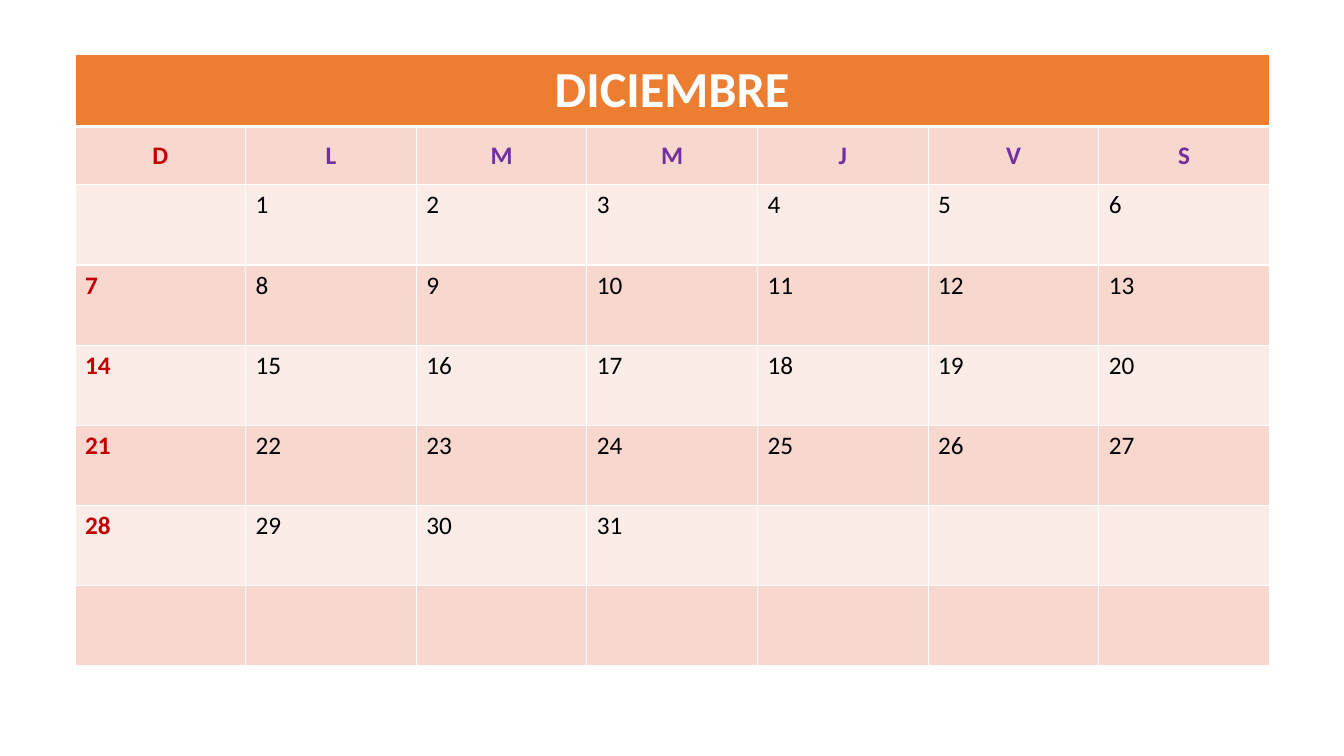
from dataclasses import dataclass

from lxml import etree
from pptx import Presentation
from pptx.dml import color
from pptx.enum import text
from pptx.oxml import ns
from pptx.util import Cm, Pt


@dataclass(frozen=True)
class Theme:
    font: str = "Calibri"
    title_size: int = 36
    body_size: int = 18
    white: str = "FFFFFF"
    black: str = "000000"
    orange: str = "ED7D31"
    band_dark: str = "F8D7CE"
    band_light: str = "FCECE8"
    sunday: str = "C00000"
    weekday: str = "7030A0"
    border: float = 1
    title_border: float = 3


class CalendarSlide:
    def __init__(self, presentation, theme):
        self.theme = theme
        self.slide = presentation.slides.add_slide(presentation.slide_layouts[6])

    def borders(self, cell, top, bottom):
        theme = self.theme
        properties = cell._tc.get_or_add_tcPr()
        widths = {"lnL": theme.border, "lnR": theme.border, "lnT": top, "lnB": bottom}
        for index, (side, width) in enumerate(widths.items()):
            line = etree.Element(ns.qn(f"a:{side}"), w=str(Pt(width)))
            fill = etree.SubElement(line, ns.qn("a:solidFill"))
            etree.SubElement(fill, ns.qn("a:srgbClr"), val=theme.white)
            properties.insert(index, line)

    def cell(self, cell, words, fill, ink, size=None, bold=False, centred=False):
        cell.fill.solid()
        cell.fill.fore_color.rgb = color.RGBColor.from_string(fill)
        cell.text = words
        paragraph = cell.text_frame.paragraphs[0]
        if centred:
            cell.vertical_anchor = text.MSO_ANCHOR.MIDDLE
            paragraph.alignment = text.PP_ALIGN.CENTER
        values = {"name": self.theme.font, "size": Pt(size or self.theme.body_size), "bold": bold}
        for name, value in values.items():
            setattr(paragraph.font, name, value)
        paragraph.font.color.rgb = color.RGBColor.from_string(ink)

    def calendar(self, month, weekdays, first_column, days, left, top, column_width, heights):
        theme = self.theme
        columns = len(weekdays)
        table = self.slide.shapes.add_table(
            len(heights), columns, Cm(left), Cm(top), Cm(column_width * columns), Cm(sum(heights))
        ).table
        for column in table.columns:
            column.width = Cm(column_width)
        for row, height in zip(table.rows, heights):
            row.height = Cm(height)

        table.cell(0, 0).merge(table.cell(0, columns - 1))
        self.cell(table.cell(0, 0), month, theme.orange, theme.white,
                  size=theme.title_size, bold=True, centred=True)
        for index, weekday in enumerate(weekdays):
            ink = theme.weekday if index else theme.sunday
            self.cell(table.cell(1, index), weekday, theme.band_dark, ink, bold=True, centred=True)

        for row in range(2, len(heights)):
            fill = theme.band_dark if row % 2 else theme.band_light
            for index in range(columns):
                day = (row - 2) * columns + index - first_column + 1
                words = str(day) if 1 <= day <= days else ""
                ink = theme.black if index else theme.sunday
                self.cell(table.cell(row, index), words, fill, ink, bold=index == 0)

        for row in range(len(heights)):
            above = theme.title_border if row == 1 else theme.border
            below = theme.title_border if row == 0 else theme.border
            for index in range(columns):
                self.borders(table.cell(row, index), above, below)


def main():
    presentation = Presentation()
    presentation.slide_width = Cm(33.87)
    presentation.slide_height = Cm(19.05)
    page = CalendarSlide(presentation, Theme())
    page.calendar("DICIEMBRE", "DLMMJVS", first_column=1, days=31, left=1.89, top=1.38,
                  column_width=4.3, heights=[1.78, 1.47] + [2.02] * 6)
    presentation.save("out.pptx")


if __name__ == "__main__":
    main()
